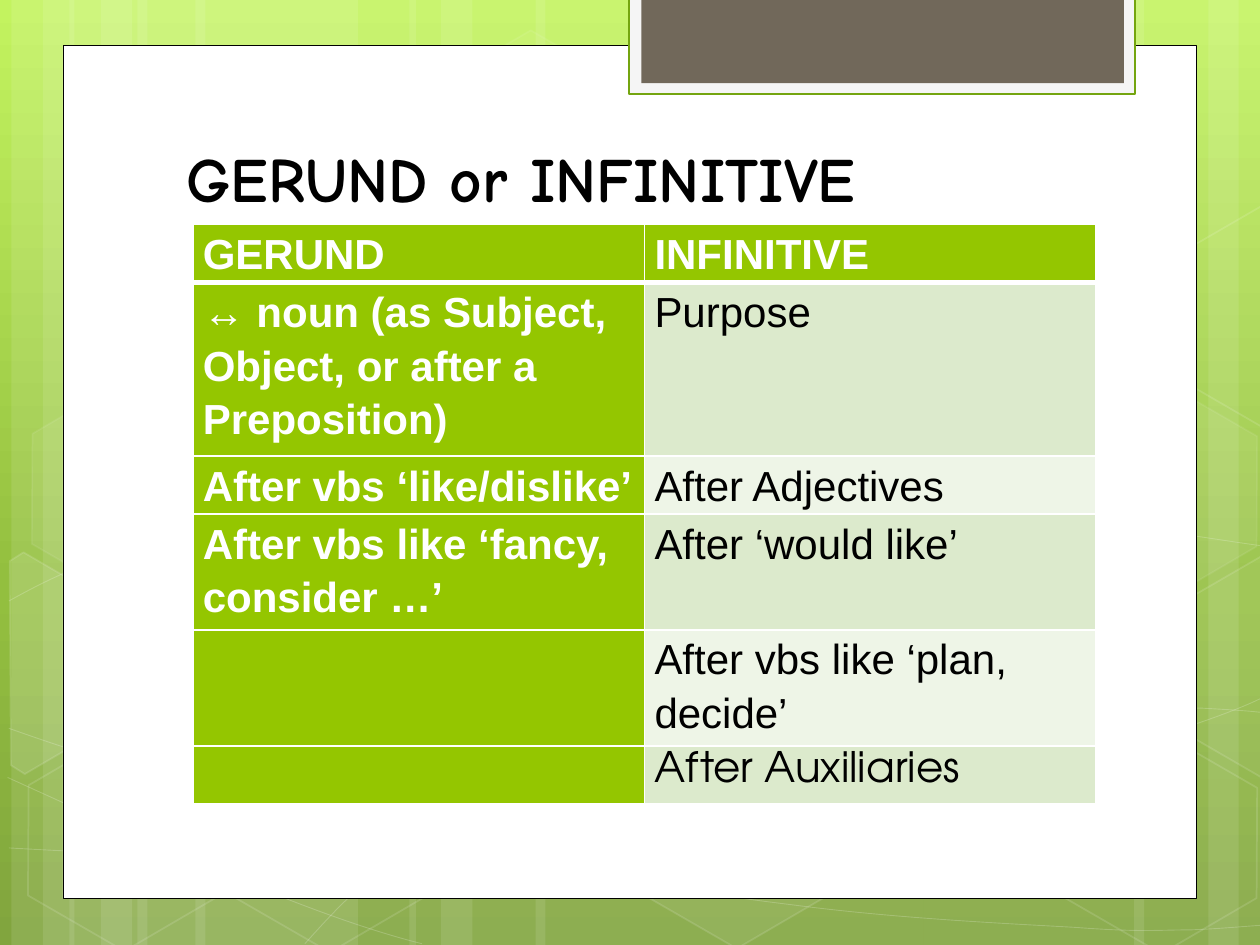
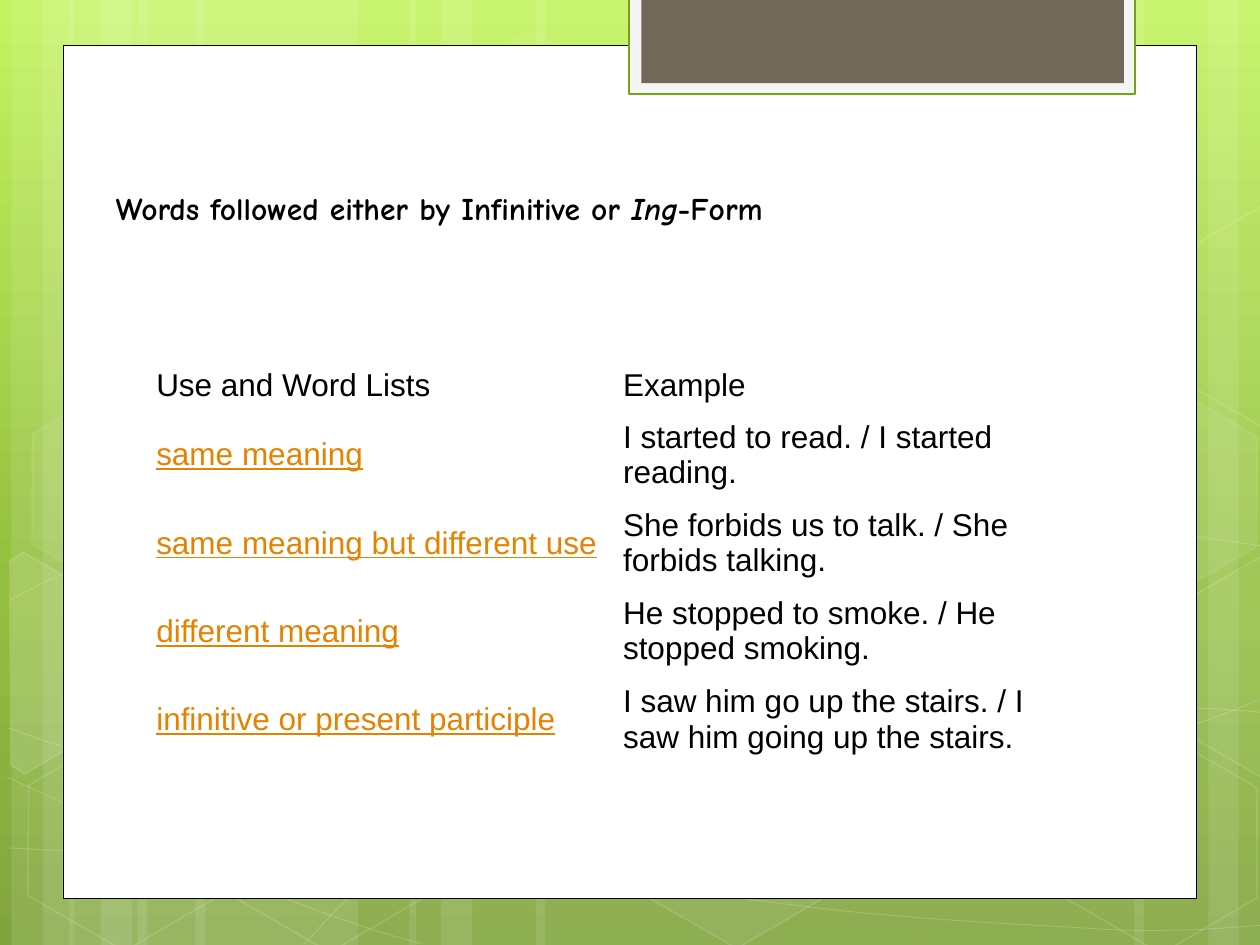
import math
from copy import deepcopy
from dataclasses import dataclass
from typing import NamedTuple, Optional

from pptx import Presentation
from pptx import util as u
from pptx.dml.color import RGBColor
from pptx.enum import shapes, text
from pptx.oxml import ns
from lxml import etree


@dataclass(frozen=True)
class Theme:
    sky: tuple = ((0, "C3F35F"), (0.62, "93BF3F"), (1, "81A53E"))
    white: str = "FFFFFF"
    black: str = "000000"
    lime: str = "94C600"
    bands: tuple = ("DCEACC", "EEF5E7")
    frame: str = "F5F5F5"
    edge: str = "74A510"
    taupe: str = "71685A"
    link: str = "E68200"
    head: str = "Comic Neue"
    body: str = "Arial"
    alt: str = "TeX Gyre Adventor"
    big: int = 36
    mid: int = 24
    small: int = 18


T = Theme()
TILT = 30


class Box(NamedTuple):
    left: float
    top: float
    width: float
    height: float

    def inches(self) -> list:
        return [u.Inches(side) for side in self]


class Bar(NamedTuple):
    left: float
    width: float
    turn: int = 0


@dataclass(frozen=True)
class Look:
    """Fill and line; opacities are percentages, None means no paint."""
    fill: Optional[str] = None
    tint: int = 100
    line: Optional[str] = None
    width: float = 1
    glow: int = 100


@dataclass(frozen=True)
class Hex:
    left: float
    top: float
    tint: int
    glow: int


@dataclass(frozen=True)
class Shard:
    """A hexagon cut off by the slide's edge, tilted about its hub."""
    hub: tuple
    points: tuple
    tint: int


@dataclass(frozen=True)
class Curve:
    """A start point and cubic steps of two handles and an end."""
    start: tuple
    steps: tuple


@dataclass(frozen=True)
class Panel:
    box: Box
    look: Look


BARS = (Bar(1.09, 1.75), Bar(0.09, 0.5), Bar(0.34, 0.83), Bar(1.55, 1.75),
        Bar(0.55, 0.5), Bar(0.8, 0.83), Bar(7.33, 1.75, 180), Bar(9.59, 0.5, 180),
        Bar(9, 0.83, 180), Bar(4.25, 3.08), Bar(3.25, 0.5), Bar(3.5, 0.83))

CURVES = (
    Curve((0.07, 6.73), ((0.61, 6.76, 1.15, 6.79, 1.9, 6.78),
                         (2.65, 6.77, 3.58, 6.75, 4.58, 6.65),
                         (5.58, 6.55, 7, 6.36, 7.92, 6.17),
                         (8.83, 5.98, 9.77, 5.68, 10.07, 5.51))),
    Curve((0.07, 4.77), ((0.36, 4.61, 0.65, 4.46, 1.21, 4.31),
                         (1.78, 4.16, 2.59, 3.94, 3.47, 3.87),
                         (4.36, 3.8, 5.44, 3.79, 6.54, 3.87),
                         (7.64, 3.95, 9.47, 4.26, 10.07, 4.34))),
    Curve((0.06, 6.17), ((1.27, 6.72, 2.47, 7.27, 3.35, 7.49),)),
    Curve((0.07, 5.78), ((0.38, 5.89, 0.7, 6, 1.28, 6.16),
                         (1.86, 6.31, 2.73, 6.56, 3.57, 6.73),
                         (4.4, 6.9, 5.45, 7.08, 6.28, 7.18),
                         (7.11, 7.29, 8, 7.33, 8.53, 7.36),
                         (9.06, 7.4, 9.19, 7.38, 9.45, 7.38),
                         (9.71, 7.37, 9.89, 7.35, 10.07, 7.34))),
    Curve((2.42, 7.49), ((2.6, 7.29, 2.78, 7.09, 3.02, 6.91),
                         (3.26, 6.72, 3.6, 6.53, 3.88, 6.39),
                         (4.16, 6.25, 4.33, 6.19, 4.69, 6.09),
                         (5.06, 5.99, 5.73, 5.85, 6.08, 5.78),
                         (6.44, 5.71, 6.49, 5.71, 6.8, 5.69),
                         (7.11, 5.66, 7.6, 5.63, 7.94, 5.62),
                         (8.29, 5.61, 8.86, 5.62, 8.86, 5.62),
                         (8.86, 5.62, 9.53, 5.62, 9.53, 5.62),
                         (9.71, 5.63, 9.88, 5.64, 9.97, 5.65),
                         (10.06, 5.66, 10.03, 5.65, 10.06, 5.66))),
)

CELLS = (
    Hex(3.34, 0.36, 4, 8), Hex(4.97, 5.89, 6, 12),
    Shard((0.36, 5.36), ((0.08, 4.45), (0.19, 4.38), (0.96, 4.83), (0.95, 5.7),
                         (0.2, 6.14), (0.09, 6.07)), 10),
    Hex(0.11, 5.91, 0, 12), Hex(0.14, 3.12, 7, 8), Hex(1.74, 5.92, 0, 12),
    Hex(7.53, 4.53, 10, 12), Hex(8.34, 5.93, 0, 12), Hex(8.34, 3.14, 7, 8),
    Shard((9.85, 5.2), ((9.26, 4.85), (10.02, 4.41), (10.09, 4.46), (10.09, 6.13),
                        (10.02, 6.17), (9.26, 5.73)), 4),
    Shard((9.85, 2.41), ((9.26, 2.07), (10.02, 1.63), (10.1, 1.68), (10.09, 3.35),
                         (10.02, 3.39), (9.26, 2.95)), 0),
)

PANELS = (
    Panel(Box(0.5, 0.36, 9, 6.77), Look(T.white, line=T.black, width=0.5)),
    Panel(Box(4.99, -0.02, 4.02, 0.77), Look(T.frame, line=T.edge, width=1.25)),
    Panel(Box(5.09, -0.02, 3.83, 0.68), Look(T.taupe)),
)

FORMS = (  # gerund, infinitive, lines of text
    ("GERUND", "INFINITIVE", 1),
    ("↔ noun (as Subject, Object, or after a Preposition)", "Purpose", 3),
    ("After vbs ‘like/dislike’", "After Adjectives", 1),
    ("After vbs like ‘fancy, consider …’", "After ‘would like’", 2),
    ("", "After vbs like ‘plan, decide’", 2),
    ("", "After Auxiliaries", 1),
)

USES = (
    ("Use and Word Lists", "Example"),
    ("same meaning", "I started to read. / I started reading."),
    ("same meaning but different use",
     "She forbids us to talk. / She forbids talking."),
    ("different meaning", "He stopped to smoke. / He stopped smoking."),
    ("infinitive or present participle",
     "I saw him go up the stairs. / I saw him going up the stairs."),
)


def rgb(code: str) -> RGBColor:
    return RGBColor.from_string(code)


def fade(node, percent: int) -> None:
    """Make the colour inside a fill or line element translucent."""
    if percent < 100:
        color = next(node.iter(ns.qn("a:srgbClr")))
        etree.SubElement(color, ns.qn("a:alpha")).set("val", str(percent * 1000))


def paint(shape, look: Look) -> None:
    shape.shadow.inherit = False
    props = shape.element.spPr
    if look.fill and look.tint:
        shape.fill.solid()
        shape.fill.fore_color.rgb = rgb(look.fill)
        fade(props.find(ns.qn("a:solidFill")), look.tint)
    else:
        shape.fill.background()
    if look.line:
        shape.line.color.rgb = rgb(look.line)
        shape.line.width = u.Pt(look.width)
        fade(props.find(ns.qn("a:ln")), look.glow)
    else:
        shape.line.fill.background()


def block(slide, box: Box, look: Look, kind=shapes.MSO_SHAPE.RECTANGLE):
    shape = slide.shapes.add_shape(kind, *box.inches())
    paint(shape, look)
    return shape


def trace(slide, points, look: Look, close: bool):
    spots = [(u.Inches(x), u.Inches(y)) for x, y in points]
    pen = slide.shapes.build_freeform(*spots[0])
    pen.add_line_segments(spots[1:], close=close)
    shape = pen.convert_to_shape()
    paint(shape, look)
    return shape


def bend(slide, curve: Curve) -> None:
    """Trace the handles, then join each three into one cubic step."""
    points = [curve.start] + [step[i:i + 2] for step in curve.steps for i in (0, 2, 4)]
    shape = trace(slide, points, Look(line=T.white, width=0.5, glow=20), False)
    lines = list(shape.element.iter(ns.qn("a:lnTo")))
    for i in range(0, len(lines), 3):
        cubic = etree.Element(ns.qn("a:cubicBezTo"))
        lines[i].addprevious(cubic)
        for line in lines[i:i + 3]:
            cubic.append(line[0])
            line.getparent().remove(line)


def level(shard: Shard) -> list:
    """The shard's points before its tilt."""
    cos, sin = math.cos(math.radians(TILT)), math.sin(math.radians(TILT))
    hx, hy = shard.hub
    return [(hx + (x - hx) * cos + (y - hy) * sin,
             hy - (x - hx) * sin + (y - hy) * cos) for x, y in shard.points]


def scene(slide) -> None:
    for bar in BARS:
        shape = block(slide, Box(bar.left, 0, bar.width, 7.5), Look(T.white, 10))
        shape.rotation = bar.turn
    for curve in CURVES:
        bend(slide, curve)
    for cell in CELLS:
        if isinstance(cell, Shard):
            look = Look(T.white, cell.tint, T.white, glow=12)
            shape = trace(slide, level(cell), look, True)
        else:
            look = Look(T.white, cell.tint, T.white, glow=cell.glow)
            shape = block(slide, Box(cell.left, cell.top, 1.75, 1.52), look,
                          shapes.MSO_SHAPE.HEXAGON)
            shape.adjustments[0] = 0.285
        shape.rotation = TILT
    for panel in PANELS:
        block(slide, panel.box, panel.look)


def share(slide) -> None:
    """Draw the scene and the sky once, on the layout of the slide."""
    layout = slide.slide_layout
    sky = layout.background.fill
    sky.gradient()
    sky.gradient_angle = 270
    stops = next(layout.element.iter(ns.qn("a:gsLst")))
    stops.append(deepcopy(stops[-1]))
    for stop, (place, code) in zip(sky.gradient_stops, T.sky):
        stop.position = place
        stop.color.rgb = rgb(code)
    scene(slide)
    art = [item.element for item in slide.shapes if not item.is_placeholder]
    for number, node in enumerate(art, 20):
        node.nvSpPr.cNvPr.set("id", str(number))
        layout.shapes.element.append(node)


def write(para, words: str, *, size: int, font: str = T.body, color: str = T.black,
          bold: bool = False, italic: bool = False, under: bool = False) -> None:
    run = para.add_run()
    run.text = words
    face = run.font
    face.name, face.size, face.color.rgb = font, u.Pt(size), rgb(color)
    face.bold, face.italic, face.underline = bold, italic, under


def title(slide, box: Box, side: float, top: float, foot: float):
    """Place the title with its insets and return its paragraph."""
    shape = slide.shapes.title
    shape.left, shape.top, shape.width, shape.height = box.inches()
    frame = shape.text_frame
    frame.auto_size = text.MSO_AUTO_SIZE.NONE
    frame.vertical_anchor = text.MSO_ANCHOR.MIDDLE
    frame.margin_left = frame.margin_right = u.Inches(side)
    frame.margin_top, frame.margin_bottom = u.Inches(top), u.Inches(foot)
    para = frame.paragraphs[0]
    para.alignment = text.PP_ALIGN.LEFT
    return para


def grid(slide, box: Box, heights: list):
    table = slide.shapes.add_table(len(heights), 2, *box.inches()).table
    table.first_row = table.horz_banding = False
    for row, height in zip(table.rows, heights):
        row.height = u.Inches(height)
    return table


def border(cell, heavy: str = "") -> None:
    """White rules of 1 point, and 3 points on the heavy side."""
    props = cell._tc.get_or_add_tcPr()
    for side in "LRTB":
        rule = etree.SubElement(props, ns.qn(f"a:ln{side}"))
        rule.set("w", str(u.Pt(3 if side == heavy else 1)))
        fill = etree.SubElement(rule, ns.qn("a:solidFill"))
        etree.SubElement(fill, ns.qn("a:srgbClr")).set("val", T.white)


def forms(slide) -> None:
    para = title(slide, Box(1.38, 1.05, 7.8, 0.71), 0.1, 0.05, 0.05)
    write(para, "GERUND or INFINITIVE", size=T.big, font=T.head, bold=True)
    table = grid(slide, Box(1.53, 1.78, 7.17, 4.6), [0.46 * row[2] for row in FORMS])
    for r, row in enumerate(FORMS):
        for c, words in enumerate(row[:2]):
            cell = table.cell(r, c)
            strong = r == 0 or c == 0
            border(cell, {0: "B", 1: "T"}.get(r, ""))
            cell.fill.solid()
            cell.fill.fore_color.rgb = rgb(T.lime if strong else T.bands[(r - 1) % 2])
            cell.margin_left, cell.margin_right = u.Inches(0.08), u.Inches(0.07)
            cell.margin_top = cell.margin_bottom = 0
            if words:
                para = cell.text_frame.paragraphs[0]
                para.line_spacing = 1.15
                para.space_before, para.space_after = u.Pt(6), u.Pt(16)
                write(para, words, size=T.mid, bold=strong,
                      color=T.white if strong else T.black,
                      font=T.alt if r == len(FORMS) - 1 else T.body)


def uses(slide) -> None:
    para = title(slide, Box(0.9, 1.56, 10, 0.5), 0.02, 0.03, 0.35)
    for words in ("Words followed either by Infinitive or ", "Ing", "-Form"):
        write(para, words, size=T.small, font=T.head, bold=True, italic=words == "Ing")
    table = grid(slide, Box(1.14, 2.86, 7.41, 3.2), [0.4] + [0.7] * (len(USES) - 1))
    for r, row in enumerate(USES):
        for c, words in enumerate(row):
            cell = table.cell(r, c)
            link = r > 0 and c == 0
            cell.fill.background()
            cell.vertical_anchor = text.MSO_ANCHOR.MIDDLE
            write(cell.text_frame.paragraphs[0], words, size=T.small,
                  color=T.link if link else T.black, under=link)


def main() -> None:
    deck = Presentation()
    deck.slide_width, deck.slide_height = u.Inches(10), u.Inches(7.5)
    first, second = (deck.slides.add_slide(deck.slide_layouts[5]) for _ in range(2))
    share(first)
    forms(first)
    uses(second)
    deck.save("out.pptx")


if __name__ == "__main__":
    main()
